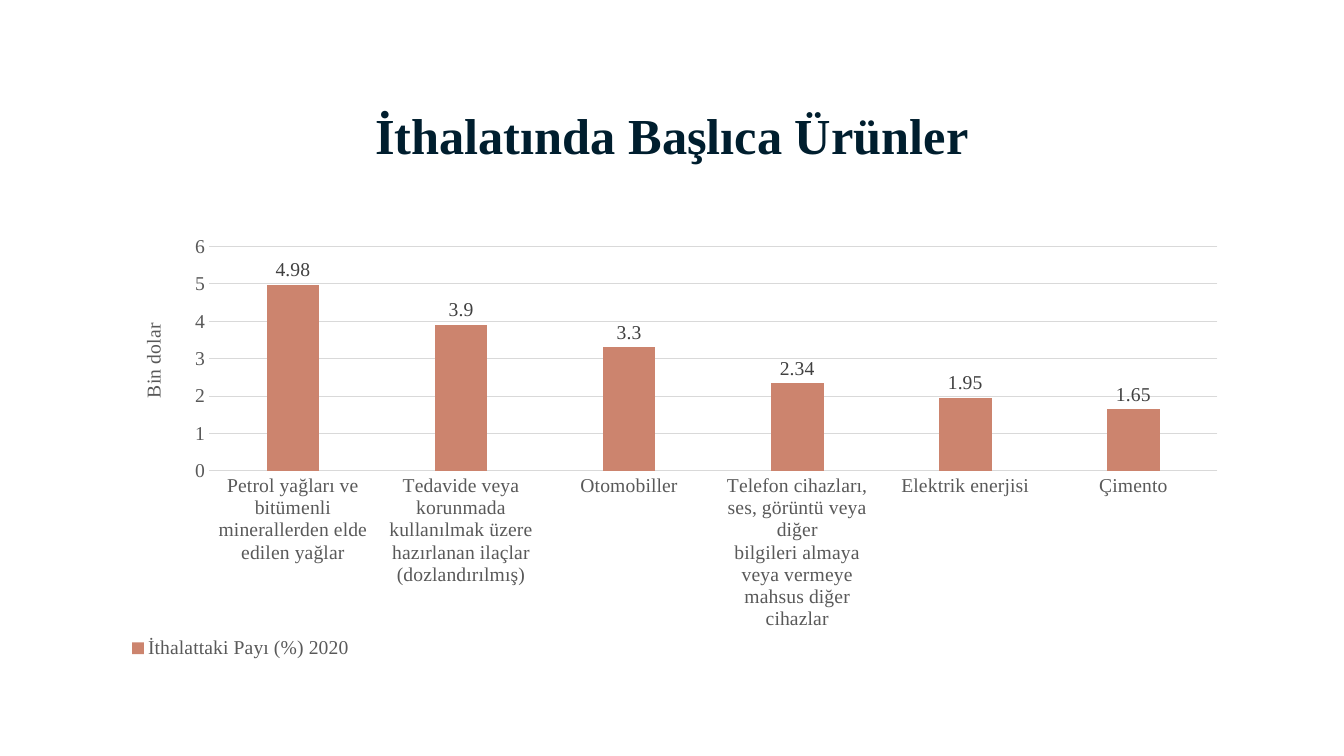
from lxml.etree import SubElement
from pptx import Presentation
from pptx.chart.data import CategoryChartData
from pptx.dml.color import RGBColor
from pptx.enum.chart import (XL_CHART_TYPE, XL_LABEL_POSITION,
                             XL_LEGEND_POSITION, XL_TICK_MARK)
from pptx.enum.text import MSO_ANCHOR, PP_ALIGN
from pptx.oxml import parse_xml
from pptx.oxml.ns import nsdecls, qn
from pptx.util import Emu, Pt

SHARES = {
    "Petrol yağları ve bitümenli minerallerden elde\nedilen yağlar": 4.98,
    "Tedavide veya korunmada kullanılmak üzere\n"
    "hazırlanan ilaçlar (dozlandırılmış)": 3.9,
    "Otomobiller": 3.3,
    "Telefon cihazları, ses, görüntü veya diğer\n"
    "bilgileri almaya veya vermeye mahsus diğer\ncihazlar": 2.34,
    "Elektrik enerjisi": 1.95,
    "Çimento": 1.65,
}


def px(length):
    return Emu(round(length * 914400 / 100.8))


def color(value):
    return RGBColor.from_string(value)


def set_values(target, values):
    for name, value in values.items():
        setattr(target, name, value)


def place(element, inner=False, **fractions):
    """Give a chart part a manual layout in fractions of the chart."""
    layout = element.find(qn("c:layout"))
    if layout is None:
        layout = parse_xml(f"<c:layout {nsdecls('c')}/>")
        overlay = element.find(qn("c:overlay"))
        if overlay is None:
            element.insert(0, layout)
        else:
            overlay.addprevious(layout)
    manual = SubElement(layout, qn("c:manualLayout"))
    settings = {"layoutTarget": "inner"} if inner else {}
    settings.update({"xMode": "edge", "yMode": "edge"}, **fractions)
    for name, value in settings.items():
        SubElement(manual, qn(f"c:{name}")).set("val", str(value))


class SlideBuilder:
    font = "Times New Roman"
    title_color, text_color, label_color = "001E2E", "595959", "404040"
    line_color, bar_color = "D9D9D9", "CC846E"

    def __init__(self, presentation):
        self.slide = presentation.slides.add_slide(presentation.slide_layouts[5])

    def style_font(self, font, size, font_color, bold=False):
        set_values(font, {"name": self.font, "size": Pt(size), "bold": bold})
        font.color.rgb = color(font_color)

    def style_line(self, line):
        line.color.rgb = color(self.line_color)
        line.width = Pt(0.75)

    def title(self, text, left, top, width, height):
        shape = self.slide.shapes.title
        set_values(shape, {"left": px(left), "top": px(top),
                           "width": px(width), "height": px(height)})
        shape.text_frame.text = text
        set_values(shape.text_frame, {"vertical_anchor": MSO_ANCHOR.MIDDLE,
                                      "word_wrap": True})
        paragraph = shape.text_frame.paragraphs[0]
        paragraph.alignment = PP_ALIGN.CENTER
        self.style_font(paragraph.runs[0].font, 36, self.title_color, True)

    def column_chart(self, series_name, shares, axis_title, *box):
        data = CategoryChartData()
        data.categories = list(shares)
        data.add_series(series_name, list(shares.values()))
        chart = self.slide.shapes.add_chart(
            XL_CHART_TYPE.COLUMN_CLUSTERED, *map(px, box), data).chart
        set_values(chart, {"has_title": False, "has_legend": True})
        self.style_font(chart.font, 14, self.text_color)
        place(chart.plots[0]._element.getparent(), inner=True,
              x=0.076, y=0.055, w=0.924, h=0.506)
        self.bars(chart.plots[0])
        self.axes(chart, axis_title)
        self.legend(chart.legend)

    def bars(self, plot):
        set_values(plot, {"gap_width": 219, "overlap": -27,
                          "vary_by_categories": False, "has_data_labels": True})
        fill = plot.series[0].format.fill
        fill.solid()
        fill.fore_color.rgb = color(self.bar_color)
        set_values(plot.data_labels, {"show_value": True,
                                      "position": XL_LABEL_POSITION.OUTSIDE_END})
        self.style_font(plot.data_labels.font, 14, self.label_color)

    def axes(self, chart, axis_title):
        for axis in (chart.category_axis, chart.value_axis):
            set_values(axis, {"major_tick_mark": XL_TICK_MARK.NONE,
                              "minor_tick_mark": XL_TICK_MARK.NONE})
            self.style_font(axis.tick_labels.font, 14, self.text_color)
        self.style_line(chart.category_axis.format.line)
        value_axis = chart.value_axis
        set_values(value_axis, {"minimum_scale": 0, "maximum_scale": 6,
                                "major_unit": 1, "has_major_gridlines": True})
        value_axis.format.line.fill.background()
        self.style_line(value_axis.major_gridlines.format.line)

        # Rotated axis title
        title = value_axis.axis_title
        title.text_frame.text = axis_title
        run = title.text_frame.paragraphs[0].runs[0]
        self.style_font(run.font, 14, self.text_color)
        body = title._element.find(".//" + qn("a:bodyPr"))
        body.set("rot", "-5400000")
        body.set("vert", "horz")
        place(title._element, x=0.01, y=0.22)

    def legend(self, legend):
        set_values(legend, {"position": XL_LEGEND_POSITION.RIGHT,
                            "include_in_layout": False})
        self.style_font(legend.font, 14, self.text_color)
        place(legend._element, x=0, y=0.93, w=0.21, h=0.06)


def main():
    presentation = Presentation()
    set_values(presentation, {"slide_width": px(1344), "slide_height": px(756)})
    builder = SlideBuilder(presentation)

    # Heading
    builder.title("İthalatında Başlıca Ürünler", 126, 58, 1092, 152)

    # Import shares
    builder.column_chart("İthalattaki Payı (%) 2020", SHARES, "Bin dolar",
                         126, 222, 1092, 444)
    presentation.save("out.pptx")


if __name__ == "__main__":
    main()
